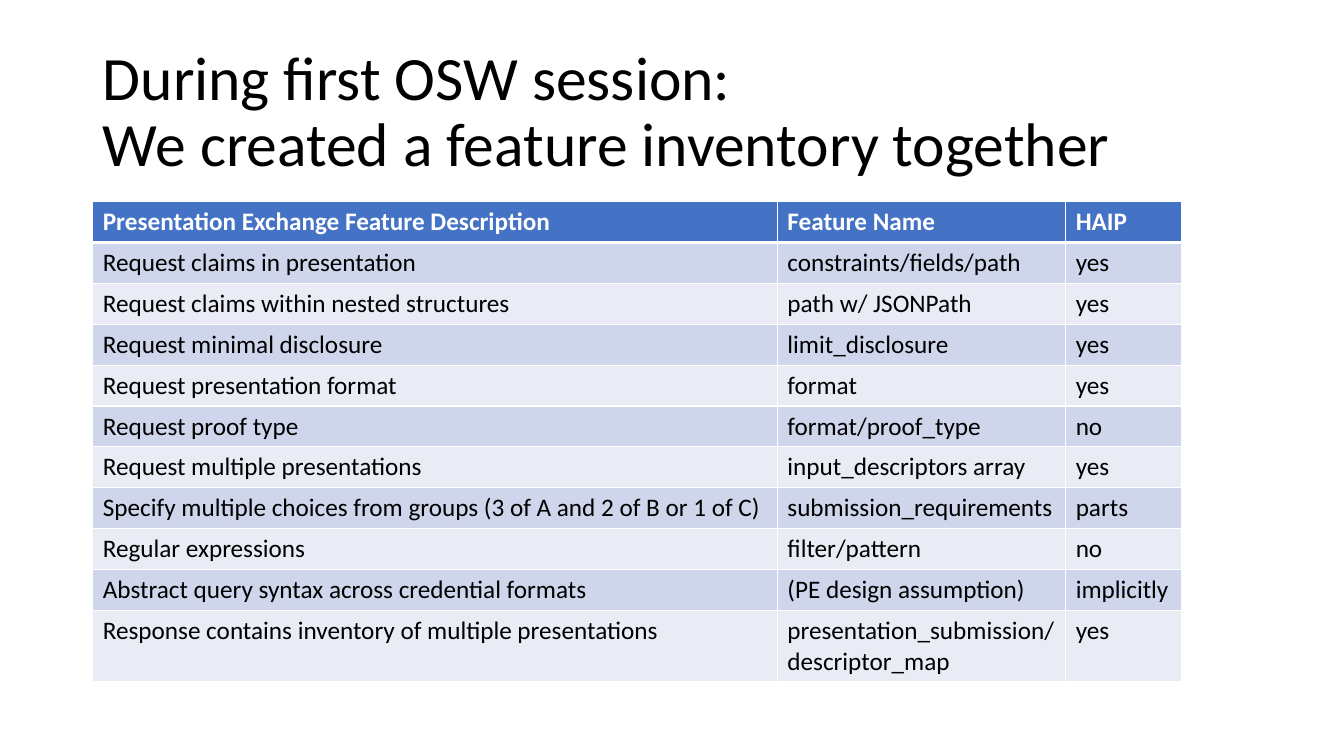
from pptx import Presentation
from pptx.dml.color import RGBColor
from pptx.enum.text import MSO_ANCHOR, MSO_AUTO_SIZE, PP_ALIGN
from pptx.oxml import parse_xml
from pptx.oxml.ns import nsdecls
from pptx.util import Inches, Pt

TITLE = "During first OSW session:\vWe created a feature inventory together"
HEADER = ("Presentation Exchange Feature Description", "Feature Name", "HAIP")
FEATURES = [
    ("Request claims in presentation", "constraints/fields/path", "yes"),
    ("Request claims within nested structures", "path w/ JSONPath", "yes"),
    ("Request minimal disclosure", "limit_disclosure", "yes"),
    ("Request presentation format", "format", "yes"),
    ("Request proof type", "format/proof_type", "no"),
    ("Request multiple presentations", "input_descriptors array", "yes"),
    ("Specify multiple choices from groups (3 of A and 2 of B or 1 of C)",
     "submission_requirements", "parts"),
    ("Regular expressions", "filter/pattern", "no"),
    ("Abstract query syntax across credential formats", "(PE design assumption)", "implicitly"),
    ("Response contains inventory of multiple presentations",
     "presentation_submission/descriptor_map", "yes"),
]
COLUMN_WIDTHS = (6.79, 2.86, 1.15)
ROW_HEIGHT = 0.4
LAST_ROW_HEIGHT = 0.7
LEFT = 0.92
FONT = "Calibri"
BLACK = RGBColor(0x00, 0x00, 0x00)
WHITE = RGBColor(0xFF, 0xFF, 0xFF)
HEADER_BLUE = RGBColor(0x44, 0x72, 0xC4)
BANDS = (RGBColor(0xE9, 0xEB, 0xF5), RGBColor(0xCF, 0xD5, 0xEA))


def format_runs(paragraph, size, color, bold=False):
    for run in paragraph.runs:
        run.font.name = FONT
        run.font.size = Pt(size)
        run.font.bold = bold
        run.font.color.rgb = color


def set_borders(cell, widths):
    properties = cell._tc.get_or_add_tcPr()
    for index, (side, width) in enumerate(widths.items()):
        properties.insert(index, parse_xml(
            f'<a:{side} {nsdecls("a")} w="{Pt(width)}"><a:solidFill>'
            f'<a:srgbClr val="{WHITE}"/></a:solidFill></a:{side}>'))


def add_title(slide):
    title = slide.shapes.title
    title.left, title.top = Inches(LEFT), Inches(0.4)
    title.width, title.height = Inches(11.5), Inches(1.45)
    frame = title.text_frame
    frame.text = TITLE
    frame.auto_size = MSO_AUTO_SIZE.NONE
    frame.vertical_anchor = MSO_ANCHOR.MIDDLE
    paragraph = frame.paragraphs[0]
    paragraph.alignment = PP_ALIGN.LEFT
    paragraph.line_spacing = 0.9
    format_runs(paragraph, 44, BLACK)


def add_feature_table(slide):
    rows = [HEADER, *FEATURES]
    heights = [ROW_HEIGHT] * len(FEATURES) + [LAST_ROW_HEIGHT]
    table = slide.shapes.add_table(
        len(rows), len(HEADER), Inches(LEFT), Inches(2),
        Inches(sum(COLUMN_WIDTHS)), Inches(sum(heights))).table
    for column, width in zip(table.columns, COLUMN_WIDTHS):
        column.width = Inches(width)
    for row_index, (texts, height) in enumerate(zip(rows, heights)):
        table.rows[row_index].height = Inches(height)
        is_header = row_index == 0
        for column_index, text in enumerate(texts):
            cell = table.cell(row_index, column_index)
            cell.text = text
            cell.fill.solid()
            cell.fill.fore_color.rgb = HEADER_BLUE if is_header else BANDS[row_index % 2]
            format_runs(cell.text_frame.paragraphs[0], 18, WHITE if is_header else BLACK, is_header)
            set_borders(cell, {"lnL": 1, "lnR": 1, "lnT": 3 if row_index == 1 else 1,
                               "lnB": 3 if is_header else 1})


def main():
    presentation = Presentation()
    presentation.slide_width = Inches(13.33)
    presentation.slide_height = Inches(7.5)
    slide = presentation.slides.add_slide(presentation.slide_layouts[5])
    add_title(slide)
    add_feature_table(slide)
    presentation.save("out.pptx")


if __name__ == "__main__":
    main()
